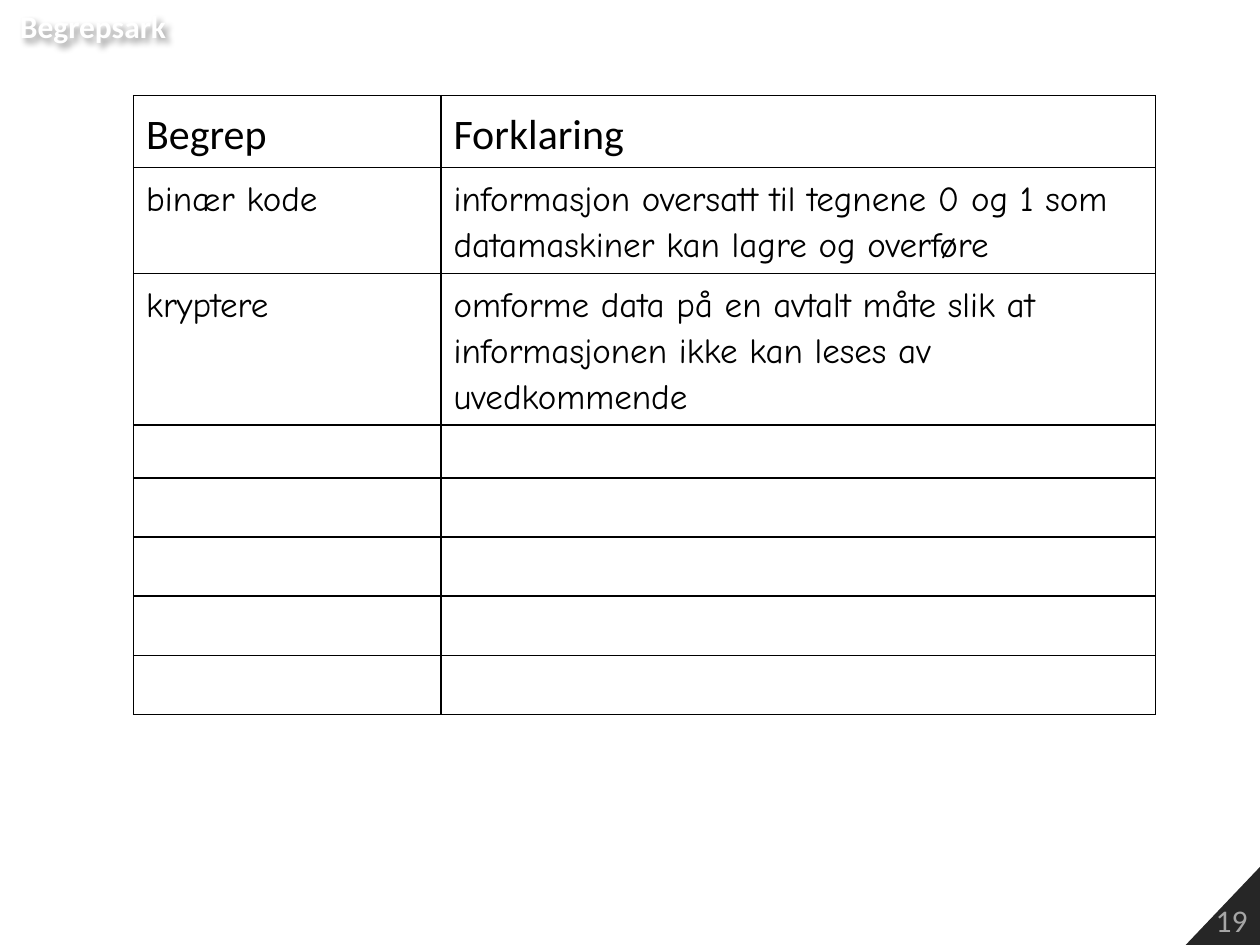
import pptx
import pptx.dml.color
import pptx.enum.text
import pptx.oxml
import pptx.oxml.ns
import pptx.util
from pptx.util import Inches

BLACK = pptx.dml.color.RGBColor(0x00, 0x00, 0x00)
WHITE = pptx.dml.color.RGBColor(0xFF, 0xFF, 0xFF)
CORNER_FILL = pptx.dml.color.RGBColor(0x26, 0x26, 0x26)
NUMBER_GREY = pptx.dml.color.RGBColor(0xA6, 0xA6, 0xA6)
NAMESPACE = pptx.oxml.ns.nsdecls("a")

TERMS = [
    ("Begrep", "Forklaring"),
    ("binær kode", "informasjon oversatt til tegnene 0 og 1 som datamaskiner kan lagre og overføre"),
    ("kryptere", "omforme data på en avtalt måte slik at informasjonen ikke kan leses av uvedkommende"),
]
COLUMN_WIDTHS = [2.44, 5.67]
ROW_HEIGHTS = [0.57, 0.84, 1.2, 0.42] + [0.47] * 4


def add_run(paragraph, text, size, font_name, color, bold=False):
    run = paragraph.add_run()
    run.text = text
    run.font.size = pptx.util.Pt(size)
    run.font.name = font_name
    run.font.bold = bold
    run.font.color.rgb = color


def add_soft_shadow(shape):
    shadow = pptx.oxml.parse_xml(
        f'<a:effectLst {NAMESPACE}><a:outerShdw blurRad="50800" dist="38100" dir="2700000" algn="tl" rotWithShape="0">'
        f'<a:srgbClr val="{BLACK}"><a:alpha val="40000"/></a:srgbClr></a:outerShdw></a:effectLst>'
    )
    shape.element.spPr.append(shadow)


def add_borders(cell):
    properties = cell._tc.get_or_add_tcPr()
    for position, side in enumerate(("lnL", "lnR", "lnT", "lnB")):
        border = pptx.oxml.parse_xml(
            f'<a:{side} {NAMESPACE} w="{pptx.util.Pt(1)}"><a:solidFill>'
            f'<a:srgbClr val="{BLACK}"/></a:solidFill></a:{side}>'
        )
        properties.insert(position, border)


def add_corner_number(slide, number):
    builder = slide.shapes.build_freeform(Inches(9.41), Inches(7.5))
    builder.add_line_segments([(Inches(10), Inches(6.88)), (Inches(10), Inches(7.5))], close=True)
    corner = builder.convert_to_shape()
    corner.shadow.inherit = False
    corner.fill.solid()
    corner.fill.fore_color.rgb = CORNER_FILL
    corner.line.fill.background()
    corner.text_frame.vertical_anchor = pptx.enum.text.MSO_ANCHOR.BOTTOM
    paragraph = corner.text_frame.paragraphs[0]
    paragraph.alignment = pptx.enum.text.PP_ALIGN.RIGHT
    add_run(paragraph, number, 18, "Calibri", NUMBER_GREY)


def add_term_table(slide):
    frame = slide.shapes.add_table(
        len(ROW_HEIGHTS), len(COLUMN_WIDTHS), Inches(1.06), Inches(0.76),
        Inches(sum(COLUMN_WIDTHS)), Inches(sum(ROW_HEIGHTS)),
    )
    terms = frame.table
    terms.first_row = False
    terms.horz_banding = False
    for column, width in zip(terms.columns, COLUMN_WIDTHS):
        column.width = Inches(width)
    for row, height in zip(terms.rows, ROW_HEIGHTS):
        row.height = Inches(height)
    for cell in terms.iter_cells():
        cell.fill.background()
        add_borders(cell)
    for row_index, texts in enumerate(TERMS):
        size, font_name = (20, "Comic Neue") if row_index else (24, "Calibri")
        for column_index, text in enumerate(texts):
            cell = terms.cell(row_index, column_index)
            if row_index == 0:
                cell.vertical_anchor = pptx.enum.text.MSO_ANCHOR.MIDDLE
            paragraph = cell.text_frame.paragraphs[0]
            paragraph.line_spacing = 1.15
            add_run(paragraph, text, size, font_name, BLACK)


def add_heading(slide, text):
    heading = slide.shapes.add_textbox(Inches(0.06), Inches(0.01), Inches(1.37), Inches(0.4))
    heading.text_frame.word_wrap = False
    heading.text_frame.auto_size = pptx.enum.text.MSO_AUTO_SIZE.SHAPE_TO_FIT_TEXT
    add_run(heading.text_frame.paragraphs[0], text, 18, "Calibri", WHITE, bold=True)
    add_soft_shadow(heading)


def main():
    presentation = pptx.Presentation()
    presentation.slide_width = Inches(10)
    presentation.slide_height = Inches(7.5)
    slide = presentation.slides.add_slide(presentation.slide_layouts[6])
    add_corner_number(slide, "19")
    add_term_table(slide)
    add_heading(slide, "Begrepsark")
    presentation.save("out.pptx")


if __name__ == "__main__":
    main()
